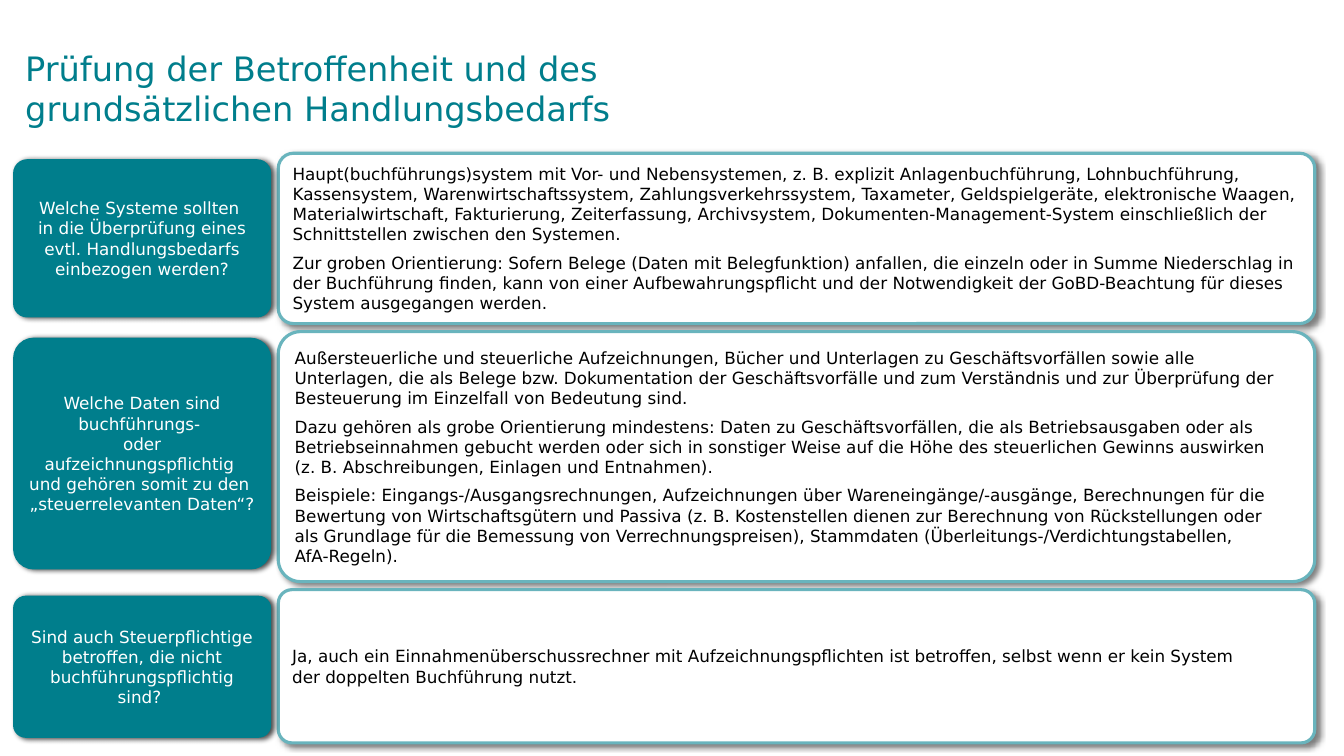
import copy
import dataclasses

import lxml.etree
import pptx
import pptx.dml.color
import pptx.enum.shapes
import pptx.enum.text
import pptx.oxml.ns
import pptx.util

Inches = pptx.util.Inches
RGBColor = pptx.dml.color.RGBColor
Align = pptx.enum.text.PP_ALIGN

TEAL = RGBColor(0x00, 0x7E, 0x8C)
LIGHT_TEAL = RGBColor(0x69, 0xB4, 0xBD)
WHITE = RGBColor(0xFF, 0xFF, 0xFF)
BLACK = RGBColor(0x00, 0x00, 0x00)
FONT = "DejaVu Sans"

FIRST_ROW_TOP = 1.52
ROW_GAP = 0.08
QUESTION_INSET = 0.06
CORNER = 0.089


@dataclasses.dataclass(frozen=True)
class BoxStyle:
    left: float
    width: float
    fill: RGBColor
    line: RGBColor | None
    text_color: RGBColor
    alignment: Align
    space_before: float
    shadow_opacity: int
    shadow_distance: float
    shadow_angle: int


@dataclasses.dataclass(frozen=True)
class Row:
    question: list[str]
    answer: list[str]
    question_height: float
    answer_height: float


QUESTION = BoxStyle(0.13, 2.56, TEAL, None, WHITE, Align.CENTER, 0, 70, 2, 20)
ANSWER = BoxStyle(2.76, 10.28, WHITE, LIGHT_TEAL, BLACK, Align.LEFT, 6, 50, 3, 40)

TITLE = "Prüfung der Betroffenheit und des \ngrundsätzlichen Handlungsbedarfs"

ROWS = [
    Row(
        [
            "Welche Systeme sollten ",
            "in die Überprüfung eines evtl. Handlungsbedarfs einbezogen werden?",
        ],
        [
            "Haupt(buchführungs)system mit Vor- und Nebensystemen, z. B. explizit "
            "Anlagenbuchführung, Lohnbuchführung, Kassensystem, Warenwirtschaftssystem, "
            "Zahlungsverkehrssystem, Taxameter, Geldspielgeräte, elektronische Waagen, "
            "Materialwirtschaft, Fakturierung, Zeiterfassung, Archivsystem, "
            "Dokumenten-Management-System einschließlich der Schnittstellen zwischen "
            "den Systemen.",
            "Zur groben Orientierung: Sofern Belege (Daten mit Belegfunktion) anfallen, "
            "die einzeln oder in Summe Niederschlag in der Buchführung finden, kann von "
            "einer Aufbewahrungspflicht und der Notwendigkeit der GoBD-Beachtung für "
            "dieses System ausgegangen werden.",
        ],
        1.57,
        1.69,
    ),
    Row(
        [
            "Welche Daten sind buchführungs- ",
            "oder aufzeichnungspflichtig ",
            "und gehören somit zu den ",
            "„steuerrelevanten Daten“?",
        ],
        [
            "Außersteuerliche und steuerliche Aufzeichnungen, Bücher und Unterlagen zu "
            "Geschäftsvorfällen sowie alle Unterlagen, die als Belege bzw. Dokumentation "
            "der Geschäftsvorfälle und zum Verständnis und zur Überprüfung der "
            "Besteuerung im Einzelfall von Bedeutung sind.",
            "Dazu gehören als grobe Orientierung mindestens: Daten zu Geschäftsvorfällen, "
            "die als Betriebsausgaben oder als Betriebseinnahmen gebucht werden oder sich "
            "in sonstiger Weise auf die Höhe des steuerlichen Gewinns auswirken \n"
            "(z. B. Abschreibungen, Einlagen und Entnahmen).",
            "Beispiele: Eingangs-/Ausgangsrechnungen, Aufzeichnungen über "
            "Wareneingänge/-ausgänge, Berechnungen für die Bewertung von "
            "Wirtschaftsgütern und Passiva (z. B. Kostenstellen dienen zur Berechnung "
            "von Rückstellungen oder \nals Grundlage für die Bemessung von "
            "Verrechnungspreisen), Stammdaten (Überleitungs-/Verdichtungstabellen, \n"
            "AfA-Regeln).",
        ],
        2.3,
        2.48,
    ),
    Row(
        [
            "Sind auch Steuerpflichtige betroffen, die nicht "
            "buchführungspflichtig sind? ",
        ],
        [
            "Ja, auch ein Einnahmenüberschussrechner mit Aufzeichnungspflichten ist "
            "betroffen, selbst wenn er kein System \nder doppelten Buchführung nutzt.",
        ],
        1.41,
        1.52,
    ),
]


def write_text(
    text_frame: pptx.text.text.TextFrame,
    texts: list[str],
    *,
    size: float,
    color: RGBColor,
    alignment: Align = Align.LEFT,
    space_before: float = 0,
) -> None:
    """Fill the frame with one paragraph per text; a newline is a line break."""
    text_frame.word_wrap = True
    text_frame.auto_size = pptx.enum.text.MSO_AUTO_SIZE.NONE
    text_frame.vertical_anchor = pptx.enum.text.MSO_ANCHOR.MIDDLE
    for index, text in enumerate(texts):
        paragraph = text_frame.add_paragraph() if index else text_frame.paragraphs[0]
        paragraph.text = text
        paragraph.alignment = alignment
        paragraph.space_before = pptx.util.Pt(space_before)
        for run in paragraph.runs:
            run.font.name = FONT
            run.font.size = pptx.util.Pt(size)
            run.font.color.rgb = color
        run_properties = paragraph.runs[0].font._element
        for line_break in paragraph._p.findall(pptx.oxml.ns.qn("a:br")):
            line_break.append(copy.deepcopy(run_properties))


def add_shadow(shape: pptx.shapes.autoshape.Shape, style: BoxStyle) -> None:
    shape.shadow.inherit = False
    qn = pptx.oxml.ns.qn
    effects = shape._element.spPr.find(qn("a:effectLst"))
    shadow = lxml.etree.SubElement(
        effects,
        qn("a:outerShdw"),
        blurRad=str(pptx.util.Pt(4)),
        dist=str(pptx.util.Pt(style.shadow_distance)),
        dir=str(style.shadow_angle * 60000),
        algn="tl",
        rotWithShape="0",
    )
    color = lxml.etree.SubElement(shadow, qn("a:srgbClr"), val=str(BLACK))
    lxml.etree.SubElement(color, qn("a:alpha"), val=str(style.shadow_opacity * 1000))


def add_box(
    slide: pptx.slide.Slide, style: BoxStyle, top: float, height: float, texts: list[str]
) -> None:
    shape = slide.shapes.add_shape(
        pptx.enum.shapes.MSO_SHAPE.ROUNDED_RECTANGLE,
        Inches(style.left), Inches(top), Inches(style.width), Inches(height),
    )
    shape.adjustments[0] = CORNER
    shape.fill.solid()
    shape.fill.fore_color.rgb = style.fill
    if style.line is None:
        shape.line.fill.background()
    else:
        shape.line.color.rgb = style.line
        shape.line.width = pptx.util.Pt(2.25)
    add_shadow(shape, style)
    write_text(
        shape.text_frame, texts, size=12, color=style.text_color,
        alignment=style.alignment, space_before=style.space_before,
    )


def add_title(slide: pptx.slide.Slide) -> None:
    title = slide.shapes.title
    title.left, title.top = Inches(0.25), Inches(0.37)
    title.width, title.height = Inches(9.58), Inches(1.01)
    frame = title.text_frame
    frame.margin_left = frame.margin_top = frame.margin_bottom = 0
    frame.margin_right = Inches(0.13)
    write_text(frame, [TITLE], size=24, color=TEAL)


def main() -> None:
    presentation = pptx.Presentation()
    presentation.slide_width = Inches(13.33)
    presentation.slide_height = Inches(7.5)
    slide = presentation.slides.add_slide(presentation.slide_layouts[5])
    add_title(slide)
    top = FIRST_ROW_TOP
    for row in ROWS:
        add_box(slide, ANSWER, top, row.answer_height, row.answer)
        add_box(slide, QUESTION, top + QUESTION_INSET, row.question_height, row.question)
        top += row.answer_height + ROW_GAP
    presentation.save("out.pptx")


if __name__ == "__main__":
    main()
